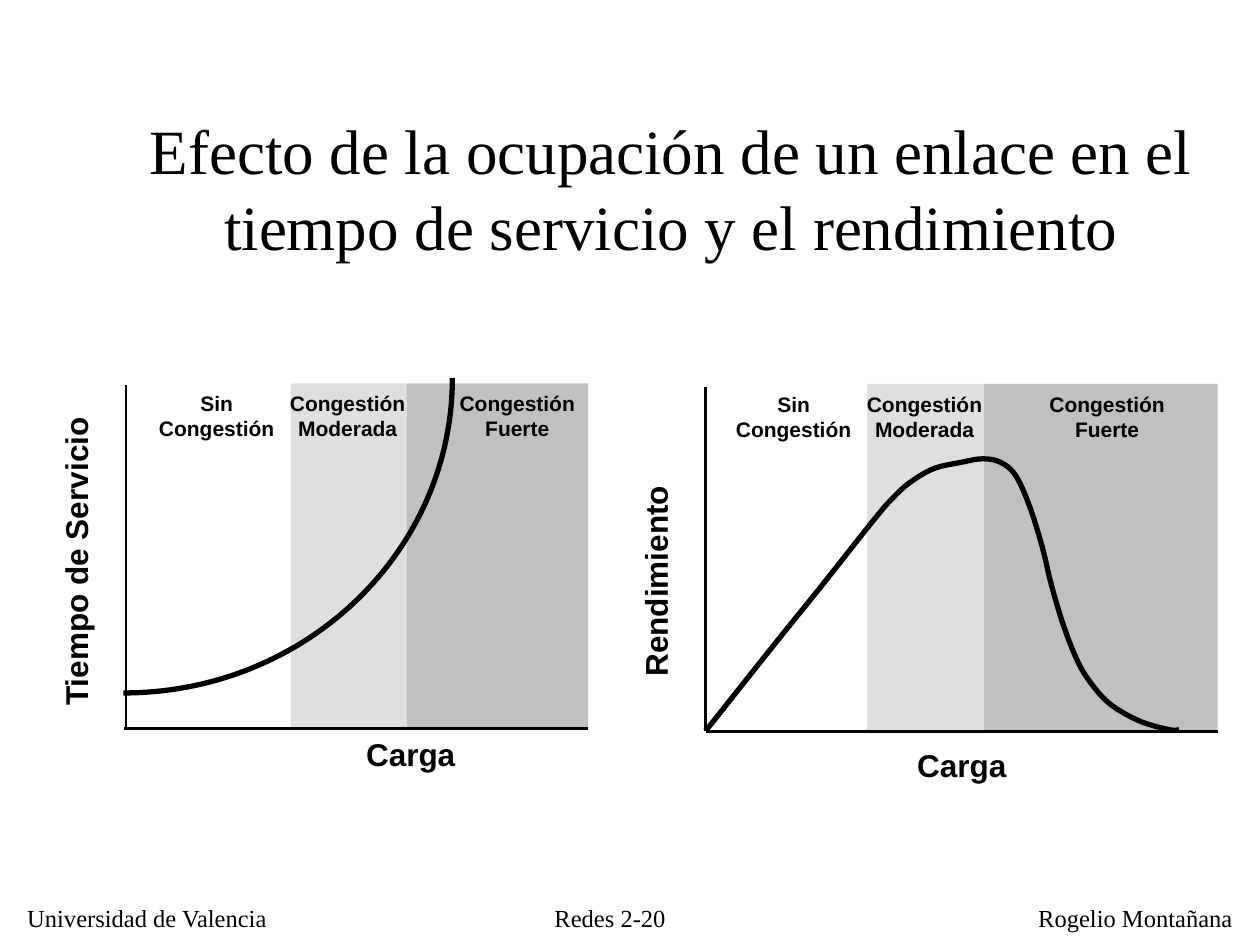
from lxml.etree import SubElement
from pptx import Presentation
from pptx.dml.color import RGBColor
from pptx.enum.shapes import MSO_CONNECTOR as Connector, MSO_SHAPE as Shape
from pptx.enum.text import MSO_ANCHOR as Anchor, PP_ALIGN as Align
from pptx.oxml.ns import qn
from pptx.util import Cm, Pt

COLORS = {"ink": "000000", "band": "C0C0C0"}
SERIF, SANS = "Times New Roman", "Arial"
LABEL_WIDTH = 2.84


class Deck:
    """Slide style and drawing methods; all lengths are in centimetres."""

    def __init__(self, slide):
        self.shapes = slide.shapes

    def color(self, name):
        return RGBColor.from_string(COLORS[name])

    def text(self, lines, left, top, width, height, size, font=SANS, bold=True,
             align=Align.LEFT, wrap=True, rotation=0):
        box = self.shapes.add_textbox(Cm(left), Cm(top), Cm(width), Cm(height))
        box.rotation = rotation
        frame = box.text_frame
        frame.word_wrap = wrap
        frame.vertical_anchor = Anchor.MIDDLE
        for i, line in enumerate(lines):
            paragraph = frame.add_paragraph() if i else frame.paragraphs[0]
            paragraph.alignment = align
            run = paragraph.add_run()
            run.text = line
            run.font.name, run.font.size, run.font.bold = font, Pt(size), bold
            run.font.color.rgb = self.color("ink")

    def band(self, left, top, width, height, opacity=100):
        rect = self.shapes.add_shape(
            Shape.RECTANGLE, Cm(left), Cm(top), Cm(width), Cm(height))
        rect.shadow.inherit = False
        rect.line.fill.background()
        rect.fill.solid()
        rect.fill.fore_color.rgb = self.color("band")
        if opacity < 100:
            color = rect.fill._xPr.find(".//" + qn("a:srgbClr"))
            SubElement(color, qn("a:alpha"), val=str(opacity * 1000))

    def axis(self, x1, y1, x2, y2):
        line = self.shapes.add_connector(
            Connector.STRAIGHT, Cm(x1), Cm(y1), Cm(x2), Cm(y2))
        line.line.color.rgb = self.color("ink")
        line.line.width = Pt(1.5)
        SubElement(line._element.spPr, qn("a:effectLst"))

    def curve(self, start, segments):
        """Draw cubic segments, each (control, control, end)."""
        builder = self.shapes.build_freeform(Cm(start[0]), Cm(start[1]))
        builder.add_line_segments(
            [(Cm(x), Cm(y)) for *_, (x, y) in segments], close=False)
        curve = builder.convert_to_shape()
        curve.shadow.inherit = False
        curve.fill.background()
        curve.line.color.rgb = self.color("ink")
        curve.line.width = Pt(3)
        # Turn the straight segments into cubic ones
        for straight, points in zip(curve._element.findall(".//" + qn("a:lnTo")), segments):
            outline = straight.getparent()
            cubic = SubElement(outline, qn("a:cubicBezTo"))
            for x, y in points:
                SubElement(cubic, qn("a:pt"), x=str(Cm(x) - curve.left),
                           y=str(Cm(y) - curve.top))
            outline.remove(straight)

    def graph(self, origin, axis_start, axis_top, band_top, moderate, strong, right,
              label_top, centers, x_title, y_title, start, segments):
        x, base = origin
        # Congestion zones
        self.band(moderate, band_top, strong - moderate, base - band_top, opacity=50)
        self.band(strong, band_top, right - strong, base - band_top)
        # Axes and their titles
        self.axis(x, base, x, axis_top)
        self.axis(axis_start, base, right, base)
        self.text(["Carga"], *x_title, 2.7, 1.02, 18)
        title, *place = y_title
        self.text([title], *place, 1.02, 18, rotation=270)
        # Curve and zone names
        self.curve(start, segments)
        zones = [("Sin", "Congestión"), ("Congestión", "Moderada"),
                 ("Congestión", "Fuerte")]
        for zone, center in zip(zones, centers):
            self.text(zone, center - LABEL_WIDTH / 2, label_top, LABEL_WIDTH, 1.27, 12,
                      align=Align.CENTER, wrap=False)


def smooth_segments(knots):
    """Cubic segments of a Catmull-Rom spline through the knots."""
    padded = [knots[0], *knots, knots[-1]]
    return [(tuple(q + (r - p) / 6 for p, q, r in zip(a, b, c)),
             tuple(r - (s - q) / 6 for q, r, s in zip(b, c, d)), c)
            for a, b, c, d in zip(padded, padded[1:], padded[2:], padded[3:])]


THROUGHPUT = [
    (14.22, 14.73), (14.35, 14.58), (14.81, 14), (15.7, 12.88), (16.54, 11.84),
    (17.65, 10.44), (18.01, 10.03), (18.34, 9.73), (18.82, 9.45), (19.38, 9.32),
    (19.81, 9.25), (20.17, 9.32), (20.47, 9.58), (20.75, 10.19), (21.01, 11.02),
    (21.18, 11.73), (21.41, 12.52), (21.67, 13.21), (21.92, 13.67), (22.35, 14.17),
    (22.96, 14.53), (23.57, 14.71), (23.77, 14.71)]


def main():
    prs = Presentation()
    prs.slide_width, prs.slide_height = Cm(25.4), Cm(19.05)
    deck = Deck(prs.slides.add_slide(prs.slide_layouts[6]))

    # Footer
    for words, left, width, align in [
            ("Redes 2-20", 10.7, 3.2, Align.CENTER),
            ("Universidad de Valencia", 0.3, 5.41, Align.LEFT),
            ("Rogelio Montañana", 20.68, 4.42, Align.LEFT)]:
        deck.text([words], left, 18.08, width, 0.84, 14, SERIF, False, align, wrap=False)

    # Title
    deck.text(["Efecto de la ocupación de un enlace en el "
               "tiempo de servicio y el rendimiento"],
              2.77, 2.13, 21.52, 3.3, 36, SERIF, False, Align.CENTER)

    # Service time against load
    deck.graph(origin=(2.54, 14.69), axis_start=2.49, axis_top=7.77, band_top=7.73,
               moderate=5.86, strong=8.2, right=11.86, label_top=7.75,
               centers=(4.37, 7.01, 10.43), x_title=(7.13, 14.68),
               y_title=("Tiempo de Servicio", -1.75, 10.69, 6.55),
               start=(2.49, 13.97),
               segments=[((6.15, 13.97), (9.12, 11.13), (9.12, 7.62))])

    # Throughput against load
    deck.graph(origin=(14.22, 14.74), axis_start=14.24, axis_top=7.8, band_top=7.74,
               moderate=17.48, strong=19.83, right=24.55, label_top=7.76,
               centers=(16, 18.64, 22.32), x_title=(18.24, 14.91),
               y_title=("Rendimiento", 10.77, 10.94, 4.88),
               start=THROUGHPUT[0], segments=smooth_segments(THROUGHPUT))

    prs.save("out.pptx")


if __name__ == "__main__":
    main()
